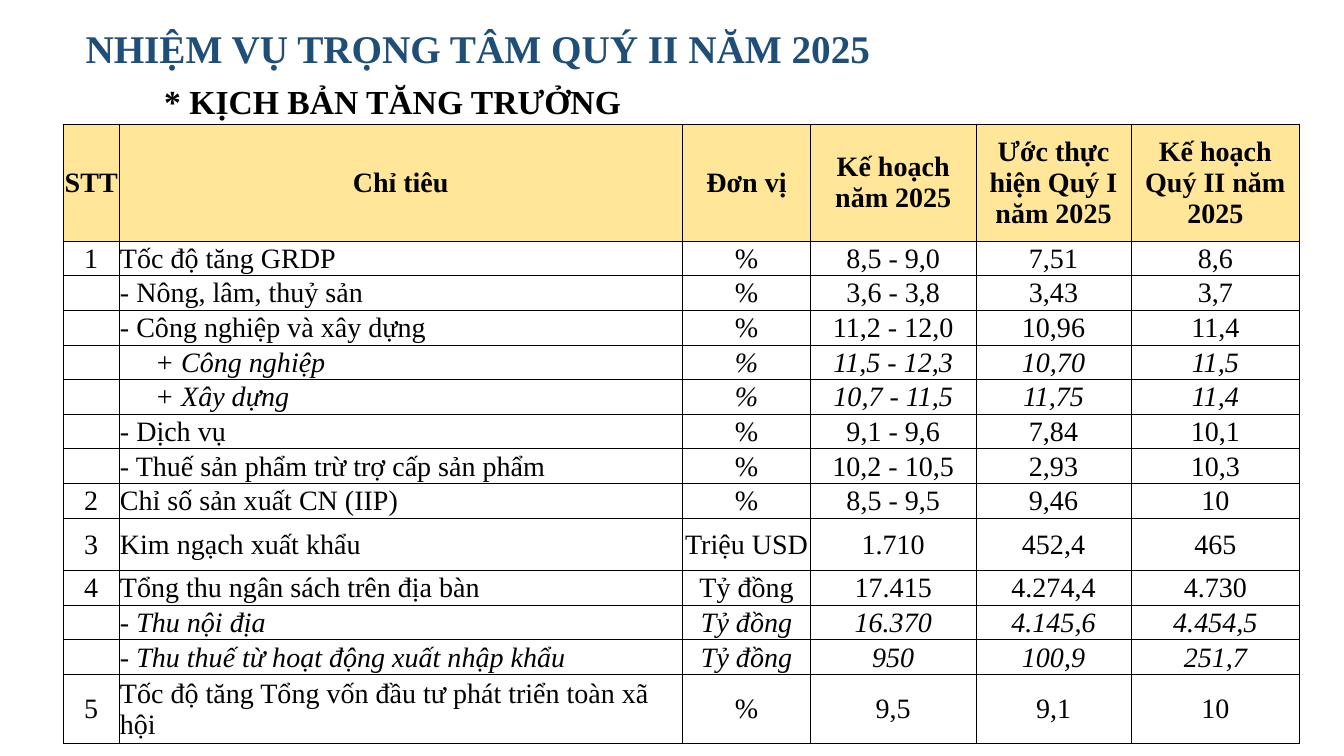
"""Build the slide of growth targets for the second quarter of 2025."""
import pptx
import pptx.util
import pptx.dml.color
import pptx.enum.text
import pptx.oxml
import pptx.oxml.ns

Inches = pptx.util.Inches
Pt = pptx.util.Pt
ALIGN = pptx.enum.text.PP_ALIGN
COLORS = {"title": "1F4E79", "text": "000000", "head": "FFE699", "line": "000000"}


def write(frame, text, size=20, color="text", bold=False, italic=False, align=ALIGN.LEFT):
    """Put formatted text in a frame."""
    frame.word_wrap = True
    para = frame.paragraphs[0]
    para.alignment = align
    run = para.add_run()
    run.text = text
    font = run.font
    font.name = "Times New Roman"
    font.size = Pt(size)
    font.bold = bold
    font.italic = italic
    font.color.rgb = pptx.dml.color.RGBColor.from_string(COLORS[color])


deck = pptx.Presentation()
deck.slide_width = Inches(13.33)
deck.slide_height = Inches(7.5)
slide = deck.slides.add_slide(deck.slide_layouts[6])

title = slide.shapes.add_textbox(Inches(0.75), Inches(0.19), Inches(8.7), Inches(0.57))
write(title.text_frame, "NHIỆM VỤ TRỌNG TÂM QUÝ II NĂM 2025", size=28, color="title", bold=True)
topic = slide.shapes.add_textbox(Inches(1.53), Inches(0.75), Inches(8.18), Inches(0.5))
write(topic.text_frame, "* KỊCH BẢN TĂNG TRƯỞNG", size=24, bold=True)

rows = [
    ("STT", "Chỉ tiêu", "Đơn vị", "Kế hoạch năm 2025", "Ước thực hiện Quý I năm 2025", "Kế hoạch Quý II năm 2025"),
    ("1", "Tốc độ tăng GRDP", "%", "8,5 - 9,0", "7,51", "8,6"),
    ("", "- Nông, lâm, thuỷ sản", "%", "3,6 - 3,8", "3,43", "3,7"),
    ("", "- Công nghiệp và xây dựng", "%", "11,2 - 12,0", "10,96", "11,4"),
    ("", "+ Công nghiệp", "%", "11,5 - 12,3", "10,70", "11,5"),
    ("", "+ Xây dựng", "%", "10,7 - 11,5", "11,75", "11,4"),
    ("", "- Dịch vụ", "%", "9,1 - 9,6", "7,84", "10,1"),
    ("", "- Thuế sản phẩm trừ trợ cấp sản phẩm", "%", "10,2 - 10,5", "2,93", "10,3"),
    ("2", "Chỉ số sản xuất CN (IIP)", "%", "8,5 - 9,5", "9,46", "10"),
    ("3", "Kim ngạch xuất khẩu", "Triệu USD", "1.710", "452,4", "465"),
    ("4", "Tổng thu ngân sách trên địa bàn", "Tỷ đồng", "17.415", "4.274,4", "4.730"),
    ("", "- Thu nội địa", "Tỷ đồng", "16.370", "4.145,6", "4.454,5"),
    ("", "- Thu thuế từ hoạt động xuất nhập khẩu", "Tỷ đồng", "950", "100,9", "251,7"),
    ("5", "Tốc độ tăng Tổng vốn đầu tư phát triển toàn xã hội", "%", "9,5", "9,1", "10"),
]
widths = [0.55, 5.59, 1.27, 1.64, 1.54, 1.67]
tall = {0: 1.16, 9: 0.52, 13: 0.68}
slanted = {4, 5, 11, 12}

frame = slide.shapes.add_table(len(rows), len(widths), Inches(0.63), Inches(1.23), Inches(12.27), Inches(6.1))
table = frame.table
table.first_row = False
table.horz_banding = False
for col, width in zip(table.columns, widths):
    col.width = Inches(width)

for r, row in enumerate(rows):
    table.rows[r].height = Inches(tall.get(r, 0.34))
    for c, text in enumerate(row):
        cell = table.cell(r, c)
        cell.margin_left = Inches(0.36 if text.startswith("+") else 0.01)
        cell.margin_right = cell.margin_top = Inches(0.01)
        cell.margin_bottom = 0
        cell.vertical_anchor = pptx.enum.text.MSO_ANCHOR.MIDDLE
        if text:
            side = ALIGN.LEFT if r and c == 1 else ALIGN.CENTER
            write(cell.text_frame, text, bold=r == 0, italic=r in slanted, align=side)
        props = cell._tc.get_or_add_tcPr()
        for edge in ("lnL", "lnR", "lnT", "lnB"):
            props.append(pptx.oxml.parse_xml(
                f'<a:{edge} {pptx.oxml.ns.nsdecls("a")} w="6350"><a:solidFill>'
                f'<a:srgbClr val="{COLORS["line"]}"/></a:solidFill></a:{edge}>'))
        if r == 0:
            cell.fill.solid()
            cell.fill.fore_color.rgb = pptx.dml.color.RGBColor.from_string(COLORS["head"])
        else:
            cell.fill.background()

deck.save("out.pptx")
